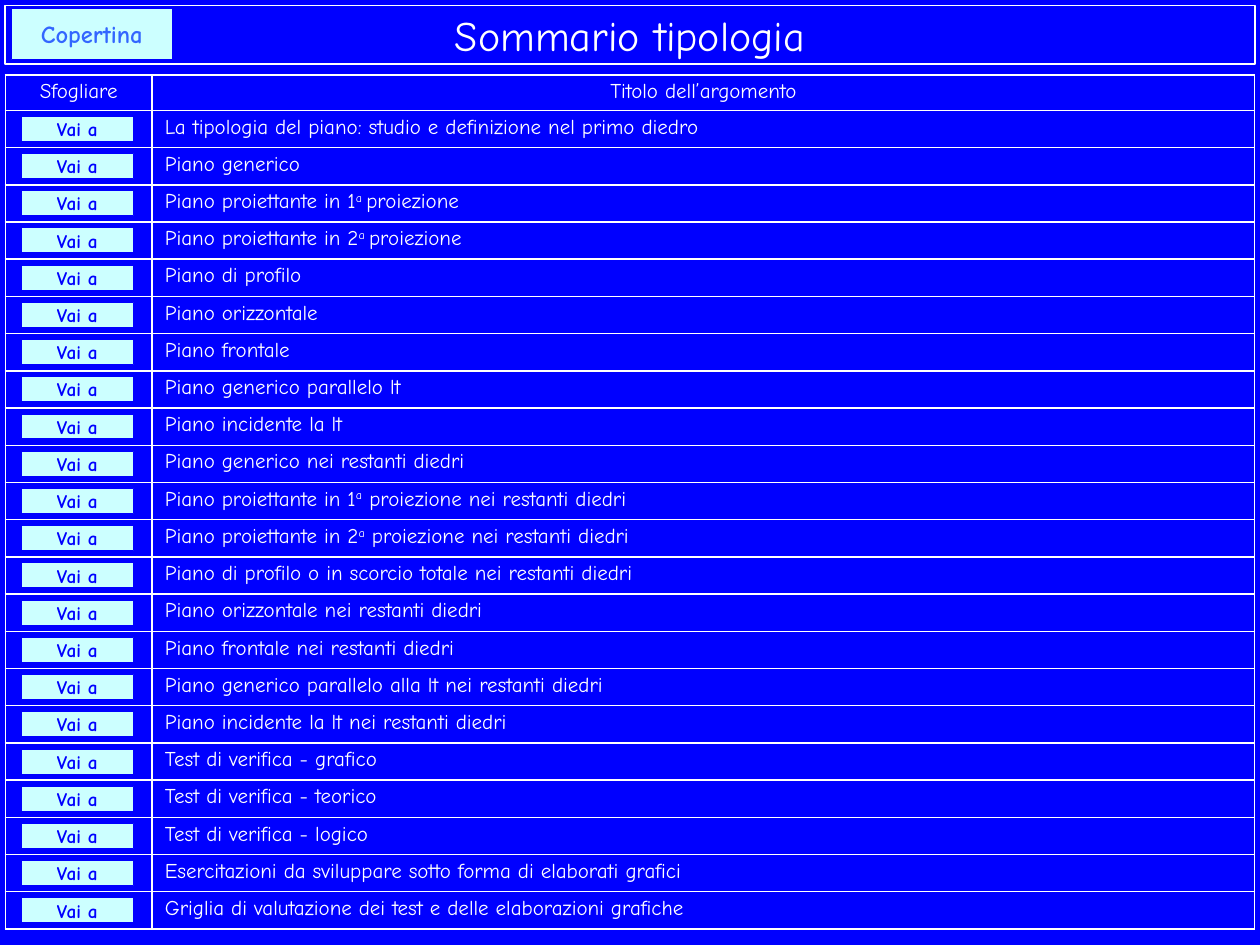
from pptx import Presentation
from pptx.dml.color import RGBColor
from pptx.enum.shapes import MSO_SHAPE as SHAPE
from pptx.enum.text import MSO_ANCHOR as ANCHOR, PP_ALIGN as ALIGN
from pptx.oxml import parse_xml
from pptx.oxml.ns import nsdecls
from pptx.util import Pt

COLORS = {"blue": "0000FF", "white": "FFFFFF", "button": "CCFFFF", "cover": "3366FF"}
FONT = "Comic Neue"
HEADER_H, ROW_H = 20.3, 21.27
TOPICS = [
    "La tipologia del piano: studio e definizione nel primo diedro",
    "Piano generico",
    "Piano proiettante in 1|a |proiezione",
    "Piano proiettante in 2|a |proiezione",
    "Piano di profilo",
    "Piano orizzontale",
    "Piano frontale",
    "Piano generico parallelo lt",
    "Piano incidente la lt",
    "Piano generico nei restanti diedri",
    "Piano proiettante in 1|a| proiezione nei restanti diedri",
    "Piano proiettante in 2|a| proiezione nei restanti diedri",
    "Piano di profilo o in scorcio totale nei restanti diedri",
    "Piano orizzontale nei restanti diedri",
    "Piano frontale nei restanti diedri",
    "Piano generico parallelo alla lt nei restanti diedri",
    "Piano incidente la lt nei restanti diedri",
    "Test di verifica - grafico",
    "Test di verifica - teorico",
    "Test di verifica - logico",
    "Esercitazioni da sviluppare sotto forma di elaborati grafici",
    "Griglia di valutazione dei test e delle elaborazioni grafiche",
]


def write(tf, text, size=12, color="white", bold=False, align=ALIGN.LEFT, spacing=None, before=None):
    p = tf.paragraphs[0]
    p.alignment = align
    p.line_spacing = spacing
    p.space_before = before
    for i, part in enumerate(text.split("|")):
        r = p.add_run()
        r.text = part
        r.font.name = FONT
        r.font.size = Pt(size)
        r.font.bold = bold
        r.font.color.rgb = RGBColor.from_string(COLORS[color])
        if i % 2:
            r.font._element.set("baseline", "30000")


def add_box(kind, x, y, w, h, fill, line, line_w, text, **fmt):
    sp = s.shapes.add_shape(kind, Pt(x), Pt(y), Pt(w), Pt(h))
    sp.shadow.inherit = False
    sp.fill.background()
    if fill:
        sp.fill.solid()
        sp.fill.fore_color.rgb = RGBColor.from_string(COLORS[fill])
    sp.line.color.rgb = RGBColor.from_string(COLORS[line])
    sp.line.width = Pt(line_w)
    tf = sp.text_frame
    tf.word_wrap = True
    tf.vertical_anchor = ANCHOR.MIDDLE
    write(tf, text, align=ALIGN.CENTER, **fmt)


prs = Presentation()
prs.slide_width, prs.slide_height = Pt(720), Pt(540)
s = prs.slides.add_slide(prs.slide_layouts[6])
s.background.fill.solid()
s.background.fill.fore_color.rgb = RGBColor.from_string(COLORS["blue"])

add_box(SHAPE.RECTANGLE, 3, 3.2, 714, 33.5, None, "white", 1, "Sommario tipologia", size=24)

rows = [("Sfogliare", "Titolo dell’argomento")] + [("", topic) for topic in TOPICS]
frame = s.shapes.add_table(len(rows), 2, Pt(3), Pt(42.8), Pt(714), Pt(HEADER_H + ROW_H * len(TOPICS)))
table = frame.table
table.first_row = table.horz_banding = False
table.columns[0].width, table.columns[1].width = Pt(84), Pt(630)
for i, texts in enumerate(rows):
    table.rows[i].height = Pt(ROW_H if i else HEADER_H)
    for j, text in enumerate(texts):
        cell = table.cell(i, j)
        tf = cell.text_frame
        if text:
            write(tf, text, align=ALIGN.LEFT if i else ALIGN.CENTER, spacing=0.9, before=Pt(2.4))
        else:
            tf.paragraphs[0]._p.get_or_add_endParaRPr().set("sz", "800")
        tcPr = cell._tc.get_or_add_tcPr()
        for side in ("lnL", "lnR", "lnT", "lnB"):
            tcPr.append(parse_xml(
                f'<a:{side} {nsdecls("a")} w="12700"><a:solidFill>'
                f'<a:srgbClr val="{COLORS["white"]}"/></a:solidFill></a:{side}>'))
        cell.fill.background()

add_box(SHAPE.ACTION_BUTTON_CUSTOM, 6.5, 4.5, 92, 29.5, "button", "blue", 0, "Copertina",
        size=14, color="cover", bold=True)
for i in range(len(TOPICS)):
    add_box(SHAPE.ACTION_BUTTON_CUSTOM, 12, 66.4 + ROW_H * i, 64.5, 14.4, "button", "blue", 0, "Vai a",
            size=11, color="blue", bold=True)

prs.save("out.pptx")
